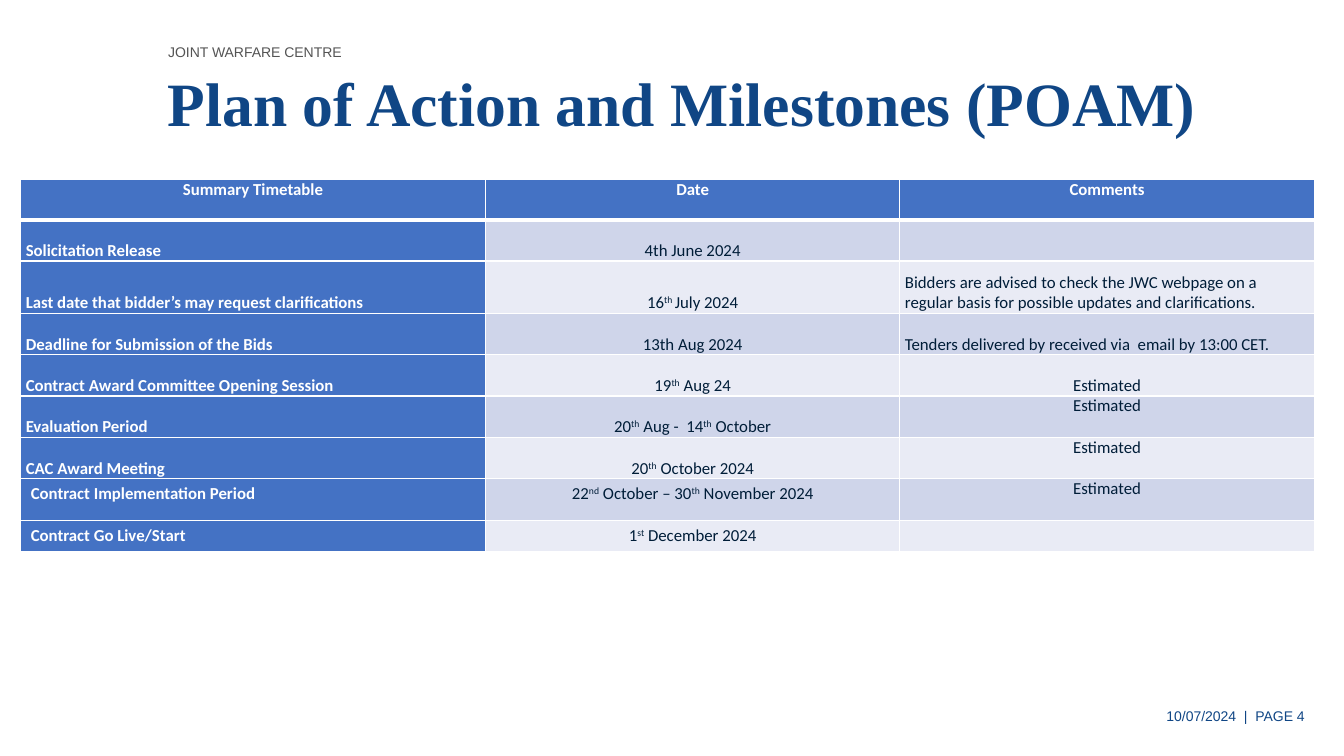
from lxml import etree
from pptx import Presentation
from pptx.dml import color
from pptx.enum import text
from pptx.oxml import ns
from pptx.util import Pt

NAVY = color.RGBColor(0x10, 0x46, 0x85)
GREY = color.RGBColor(0x54, 0x54, 0x54)
INK = color.RGBColor(0x00, 0x1D, 0x38)
WHITE = color.RGBColor(0xFF, 0xFF, 0xFF)
BLUE = color.RGBColor(0x44, 0x72, 0xC4)
BANDS = color.RGBColor(0xCF, 0xD5, 0xEA), color.RGBColor(0xE9, 0xEB, 0xF5)

LEFT, CENTER, RIGHT = text.PP_ALIGN.LEFT, text.PP_ALIGN.CENTER, text.PP_ALIGN.RIGHT
TOP, MIDDLE, BOTTOM = text.MSO_ANCHOR.TOP, text.MSO_ANCHOR.MIDDLE, text.MSO_ANCHOR.BOTTOM

HEADER = ["Summary Timetable", "Date", "Comments"]
MILESTONES = [
    ["Solicitation Release", "4th June 2024", ""],
    ["Last date that bidder’s may request clarifications", "16^th ^July 2024",
     "Bidders are advised to check the JWC webpage on a regular basis "
     "for possible updates and clarifications."],
    ["Deadline for Submission of the Bids", "13th Aug 2024",
     "Tenders delivered by received via  email by 13:00 CET."],
    ["Contract Award Committee Opening Session", "19^th^ Aug 24", "Estimated"],
    ["Evaluation Period", "20^th^ Aug -  14^th^ October", "Estimated"],
    ["CAC Award Meeting", "20^th^ October 2024", "Estimated"],
    ["Contract Implementation Period", "22^nd^ October – 30^th^ November 2024", "Estimated"],
    ["Contract Go Live/Start", "1^st^ December 2024", ""],
]
COLUMNS = [332, 296, 296]
ROWS = [28.7, 29.4, 37.2] + [29.6] * 5 + [22.6]
FIRST_ROOMY_ROW = 7
FIRST_TOP_COMMENT = 5


class Deck:
    def __init__(self, prs):
        self.s = prs.slides.add_slide(prs.slide_layouts[6])

    def add_text(self, p, content, size, font, rgb, bold=False, align=LEFT):
        p.alignment = align
        for i, part in enumerate(content.split("^")):
            if not part:
                continue
            r = p.add_run()
            r.text = part
            r.font.size = Pt(size)
            r.font.name = font
            r.font.bold = bold
            r.font.color.rgb = rgb
            if i % 2:
                r.font._element.set("baseline", "30000")

    def label(self, box, content, size, font, rgb, bold=False, align=LEFT, spacing=1.0):
        sp = self.s.shapes.add_textbox(*(Pt(v) for v in box))
        tf = sp.text_frame
        tf.word_wrap = True
        tf.vertical_anchor = MIDDLE
        p = tf.paragraphs[0]
        p.line_spacing = spacing
        self.add_text(p, content, size, font, rgb, bold, align)

    def borders(self, cell, bottom):
        tc_pr = cell._tc.get_or_add_tcPr()
        for side, width in (("L", 1), ("R", 1), ("T", 1), ("B", bottom)):
            ln = etree.SubElement(tc_pr, ns.qn(f"a:ln{side}"), w=str(int(Pt(width))))
            fill = etree.SubElement(ln, ns.qn("a:solidFill"))
            etree.SubElement(fill, ns.qn("a:srgbClr"), val=str(WHITE))

    def cell(self, cell, row, col, content):
        dark = row == 0 or col == 0
        roomy = row >= FIRST_ROOMY_ROW and col < 2
        estimate = content == "Estimated"
        at_top = row == 0 or roomy or (estimate and row >= FIRST_TOP_COMMENT)
        centred = row == 0 or col == 1 or estimate
        self.borders(cell, 3 if row == 0 else 1)
        cell.fill.solid()
        cell.fill.fore_color.rgb = BLUE if dark else BANDS[(row - 1) % 2]
        cell.margin_left = cell.margin_right = Pt(7.2 if roomy else 3.6)
        cell.margin_top = cell.margin_bottom = Pt(3.6 if roomy else 0)
        cell.vertical_anchor = TOP if at_top else BOTTOM
        self.add_text(cell.text_frame.paragraphs[0], content, 12, "Calibri",
                      WHITE if dark else INK, dark, CENTER if centred else LEFT)

    def table(self, left, top, rows):
        frame = self.s.shapes.add_table(len(rows), len(COLUMNS), Pt(left), Pt(top),
                                        Pt(sum(COLUMNS)), Pt(sum(ROWS)))
        table = frame.table
        for column, width in zip(table.columns, COLUMNS):
            column.width = Pt(width)
        for i, (height, contents) in enumerate(zip(ROWS, rows)):
            table.rows[i].height = Pt(height)
            for j, content in enumerate(contents):
                self.cell(table.cell(i, j), i, j, content)


def main():
    prs = Presentation()
    prs.slide_width, prs.slide_height = Pt(960), Pt(540)
    deck = Deck(prs)
    deck.label((113, 16, 425.5, 42.5), "JOINT WARFARE CENTRE", 10, "Arial", GREY)
    deck.label((723, 497, 216, 28.8), "10/07/2024  |  PAGE 4", 10, "Arial", NAVY, align=RIGHT)
    deck.table(14.8, 128.4, [HEADER] + MILESTONES)
    deck.label((34, 23.8, 828, 104.4), "Plan of Action and Milestones (POAM)", 44,
               "Times New Roman", NAVY, True, RIGHT, 0.9)
    prs.save("out.pptx")


if __name__ == "__main__":
    main()
